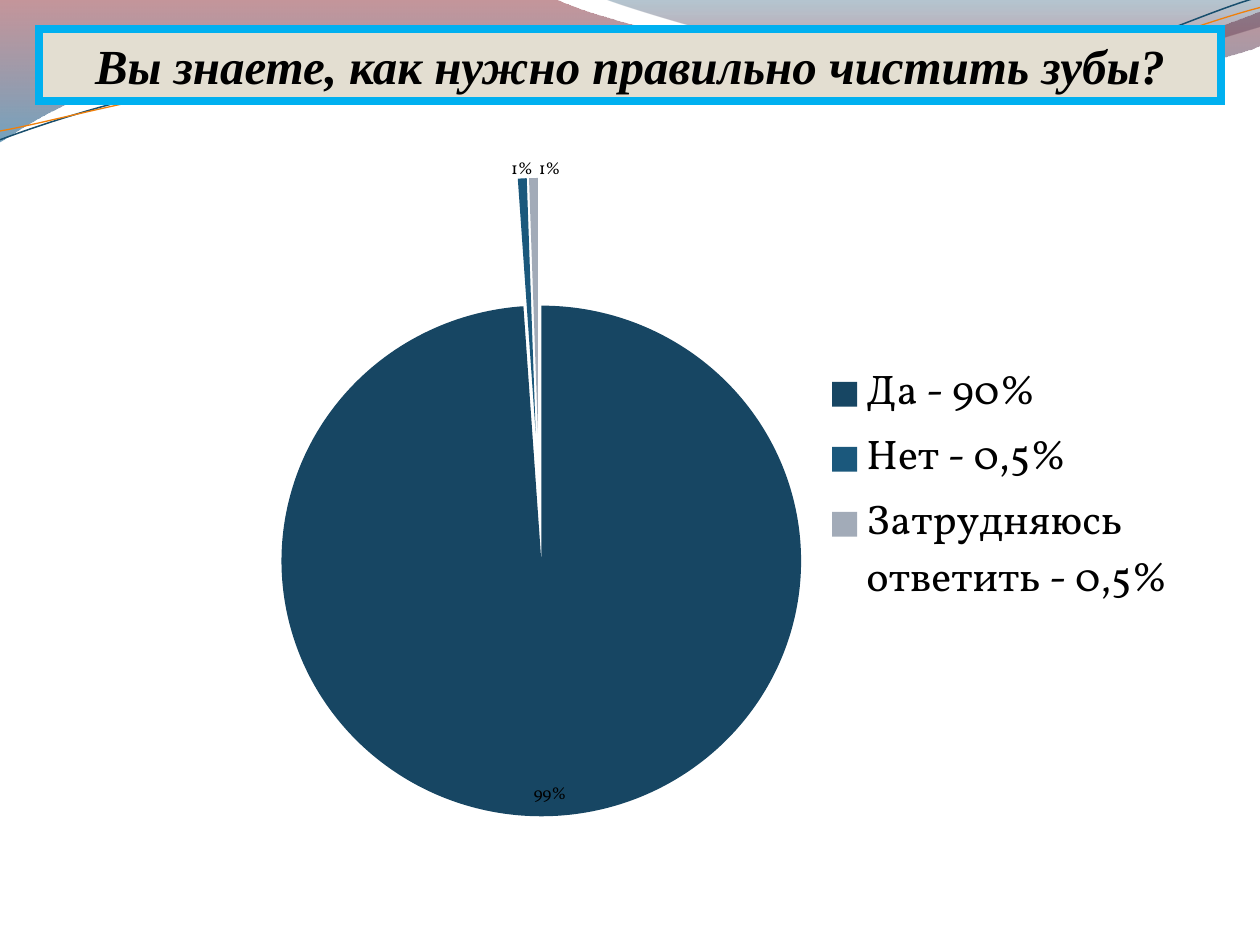
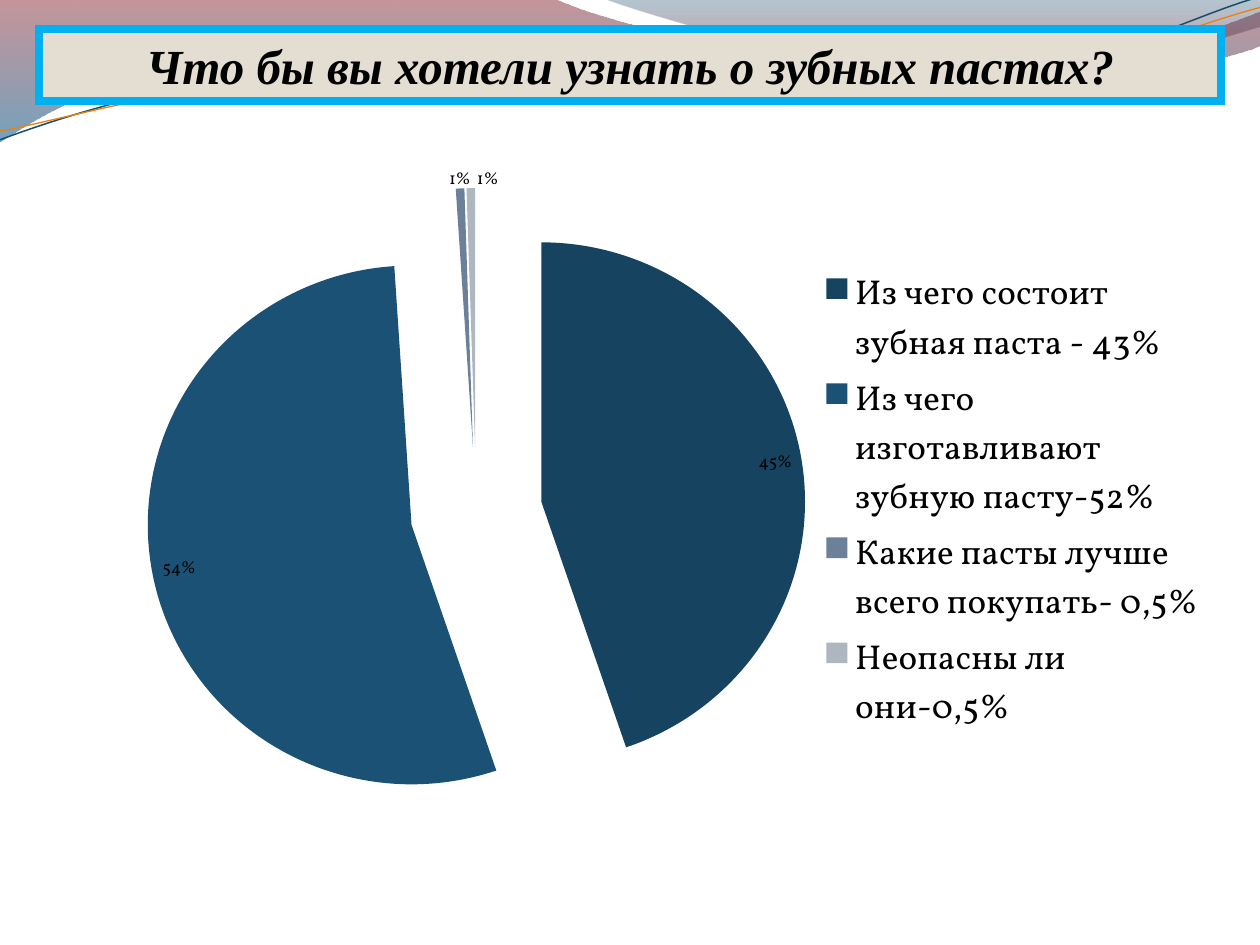
import dataclasses

import lxml.etree
import pptx
import pptx.chart.data
import pptx.dml.color
import pptx.enum.chart
import pptx.enum.text
import pptx.oxml.ns
import pptx.util

Inches = pptx.util.Inches
Pt = pptx.util.Pt
qn = pptx.oxml.ns.qn


@dataclasses.dataclass(frozen=True)
class Theme:
    ink: str = "000000"
    sand: str = "E3DED1"
    sky: str = "00B0F0"
    navy: str = "184E6D"
    orange: str = "F07F09"
    title_font: str = "Times New Roman"
    chart_font: str = "Vollkorn"
    title_size: float = 28
    label_size: float = 10


THEME = Theme()

# Master waves: start, then segments of one point (line) or three (curve);
# fill stops are position, colour, opacity in percent
BANDS = [
    ((0, 0),
     [[(4.4, -0.01)],
      [(4.76, 0.17), (6.64, 0.63), (7.58, 0.63)],
      [(8.53, 0.63), (9.58, 0.26), (10, 0.09)],
      [(10.01, 0.36)],
      [(9.83, 0.44), (8.7, 0.76), (7.46, 0.75)],
      [(6.22, 0.75), (3.82, 0.28), (2.57, 0.34)],
      [(1.29, 0.36), (0.46, 0.83), (-0.01, 1.13)],
      [(0, 0)]],
     [(0, "7E1621", 45), (1, "005689", 55)]),
    ((4.79, -0.01),
     [[(5.09, 0.11), (6.82, 0.62), (7.69, 0.65)],
      [(8.56, 0.69), (9.61, 0.32), (10, 0.21)],
      [(10, 0)],
      [(4.79, -0.01)]],
     [(0, "094467", 30), (0.8, "A10F1F", 45)]),
]
WAVES = [
    ((0, 1.11),
     [[(0.48, 0.93), (1.58, 0.57), (2.77, 0.52)],
      [(3.95, 0.47), (5.93, 0.89), (7.13, 0.8)],
      [(8.33, 0.71), (9.38, 0.15), (9.98, -0.02)]],
     THEME.navy, 0.85),
    ((0, 1.04),
     [[(0.47, 0.96), (1.64, 0.61), (2.83, 0.56)],
      [(4.03, 0.51), (5.97, 0.84), (7.17, 0.75)],
      [(8.36, 0.67), (9.41, 0.21), (10, 0.06)]],
     THEME.orange, 0.75),
]

# Slide content
PAGES = [
    dict(title="Вы знаете, как нужно правильно чистить зубы?",
         box=(0.55, 1.17, 8.91, 5.31), width=0.837, size=24,
         parts=[("Да - 90%", 90, "174663"),
                ("Нет - 0,5%", 0.5, "1B587C"),
                ("Затрудняюсь ответить - 0,5%", 0.5, "A2ABB8")]),
    dict(title="Что бы вы хотели узнать о зубных пастах?",
         box=(0.39, 1.25, 9.3, 5.39), width=0.729, size=20,
         parts=[("Из чего состоит зубная паста - 43%", 43, "16435F"),
                ("Из чего изготавливают зубную пасту-52%", 52, "1A5175"),
                ("Какие пасты лучше всего покупать- 0,5%", 0.5, "6C8199"),
                ("Неопасны ли они-0,5%", 0.5, "AEB6C0")]),
]


def color(code):
    return pptx.dml.color.RGBColor.from_string(code)


def apply(target, **values):
    for name, value in values.items():
        setattr(target, name, value)


def style(font, face, size, **more):
    apply(font, name=face, size=Pt(size), **more)
    font.color.rgb = color(THEME.ink)


def bend(shape, segments):
    """Turn each run of three line points into one cubic curve."""
    lines = list(shape.element.iter(qn("a:lnTo")))
    for seg in segments:
        group, lines = lines[:len(seg)], lines[len(seg):]
        if len(group) == 3:
            curve = lxml.etree.Element(qn("a:cubicBezTo"))
            group[0].addprevious(curve)
            for line in group:
                curve.append(line[0])
                line.getparent().remove(line)


def add_path(slide, start, segments, close):
    points = [tuple(map(Inches, p)) for p in [start, *sum(segments, [])]]
    pen = slide.shapes.build_freeform(*points[0])
    pen.add_line_segments(points[1:], close=close)
    shape = pen.convert_to_shape()
    shape.shadow.inherit = False
    bend(shape, segments)
    return shape


def add_band(slide, start, segments, stops):
    shape = add_path(slide, start, segments, True)
    shape.line.fill.background()
    shape.fill.gradient()
    shape.fill.gradient_angle = 270
    for stop, (place, code, _) in zip(shape.fill.gradient_stops, stops):
        stop.position = place
        stop.color.rgb = color(code)
    for node, (_, _, alpha) in zip(shape.element.spPr.iter(qn("a:srgbClr")), stops):
        lxml.etree.SubElement(node, qn("a:alpha"), val=str(alpha * 1000))
    return shape


def add_wave(slide, start, segments, code, width):
    shape = add_path(slide, start, segments, False)
    shape.fill.background()
    shape.line.color.rgb = color(code)
    shape.line.width = Pt(width)
    return shape


def dress_master(slide):
    """Draw the waves once and move them behind all slides."""
    shapes = [add_band(slide, *band) for band in BANDS]
    shapes += [add_wave(slide, *wave) for wave in WAVES]
    tree = slide.slide_layout.slide_master.shapes.element
    for i, shape in enumerate(shapes):
        tree.insert(2 + i, shape.element)


def set_title(slide, text):
    title = slide.shapes.title
    apply(title, left=Inches(0.31), top=Inches(0.23),
          width=Inches(9.38), height=Inches(0.57))
    title.fill.solid()
    title.fill.fore_color.rgb = color(THEME.sand)
    title.line.color.rgb = color(THEME.sky)
    title.line.width = Pt(4.5)
    edge = title.element.spPr.find(qn("a:ln"))
    lxml.etree.SubElement(edge, qn("a:miter"), lim="800000")
    frame = title.text_frame
    apply(frame, text=text, word_wrap=True,
          auto_size=pptx.enum.text.MSO_AUTO_SIZE.NONE,
          vertical_anchor=pptx.enum.text.MSO_ANCHOR.MIDDLE)
    para = frame.paragraphs[0]
    para.alignment = pptx.enum.text.PP_ALIGN.CENTER
    style(para.runs[0].font, THEME.title_font, THEME.title_size,
          bold=True, italic=True)


def place_plot(chart, width):
    """Fix the inner plot area as shares of the chart."""
    area = next(chart.element.iter(qn("c:plotArea")))
    for old in area.findall(qn("c:layout")):
        area.remove(old)
    layout = lxml.etree.Element(qn("c:layout"))
    area.insert(0, layout)
    manual = lxml.etree.SubElement(layout, qn("c:manualLayout"))
    values = dict(layoutTarget="inner", xMode="edge", yMode="edge",
                  x=0, y=0.029, w=width, h=0.971)
    for name, value in values.items():
        lxml.etree.SubElement(manual, qn("c:" + name), val=str(value))


def add_pie(slide, box, width, size, parts):
    names, values, codes = zip(*parts)
    data = pptx.chart.data.CategoryChartData()
    data.categories = names
    data.add_series("Series 1", values)
    chart = slide.shapes.add_chart(
        pptx.enum.chart.XL_CHART_TYPE.PIE, *map(Inches, box), data).chart
    apply(chart, has_title=False, has_legend=True)
    style(chart.font, THEME.chart_font, THEME.label_size)
    apply(chart.legend, include_in_layout=False,
          position=pptx.enum.chart.XL_LEGEND_POSITION.RIGHT)
    style(chart.legend.font, THEME.chart_font, size)

    # Slices
    plot = chart.plots[0]
    plot.vary_by_categories = True
    for i, code in enumerate(codes):
        fill = plot.series[0].points[i].format.fill
        fill.solid()
        fill.fore_color.rgb = color(code)
    burst = lxml.etree.Element(qn("c:explosion"), val="25")
    next(chart.element.iter(qn("c:ser"))).find(qn("c:tx")).addnext(burst)

    # Percent labels
    plot.has_data_labels = True
    labels = plot.data_labels
    apply(labels, show_percentage=True, show_value=False,
          number_format="0%", number_format_is_linked=False,
          position=pptx.enum.chart.XL_LABEL_POSITION.BEST_FIT)
    style(labels.font, THEME.chart_font, THEME.label_size)
    place_plot(chart, width)


def main():
    deck = pptx.Presentation()
    apply(deck, slide_width=Inches(10), slide_height=Inches(7.5))
    for i, page in enumerate(PAGES):
        slide = deck.slides.add_slide(deck.slide_layouts[5])
        if i == 0:
            dress_master(slide)
        set_title(slide, page["title"])
        add_pie(slide, page["box"], page["width"], page["size"], page["parts"])
    deck.save("out.pptx")


if __name__ == "__main__":
    main()
